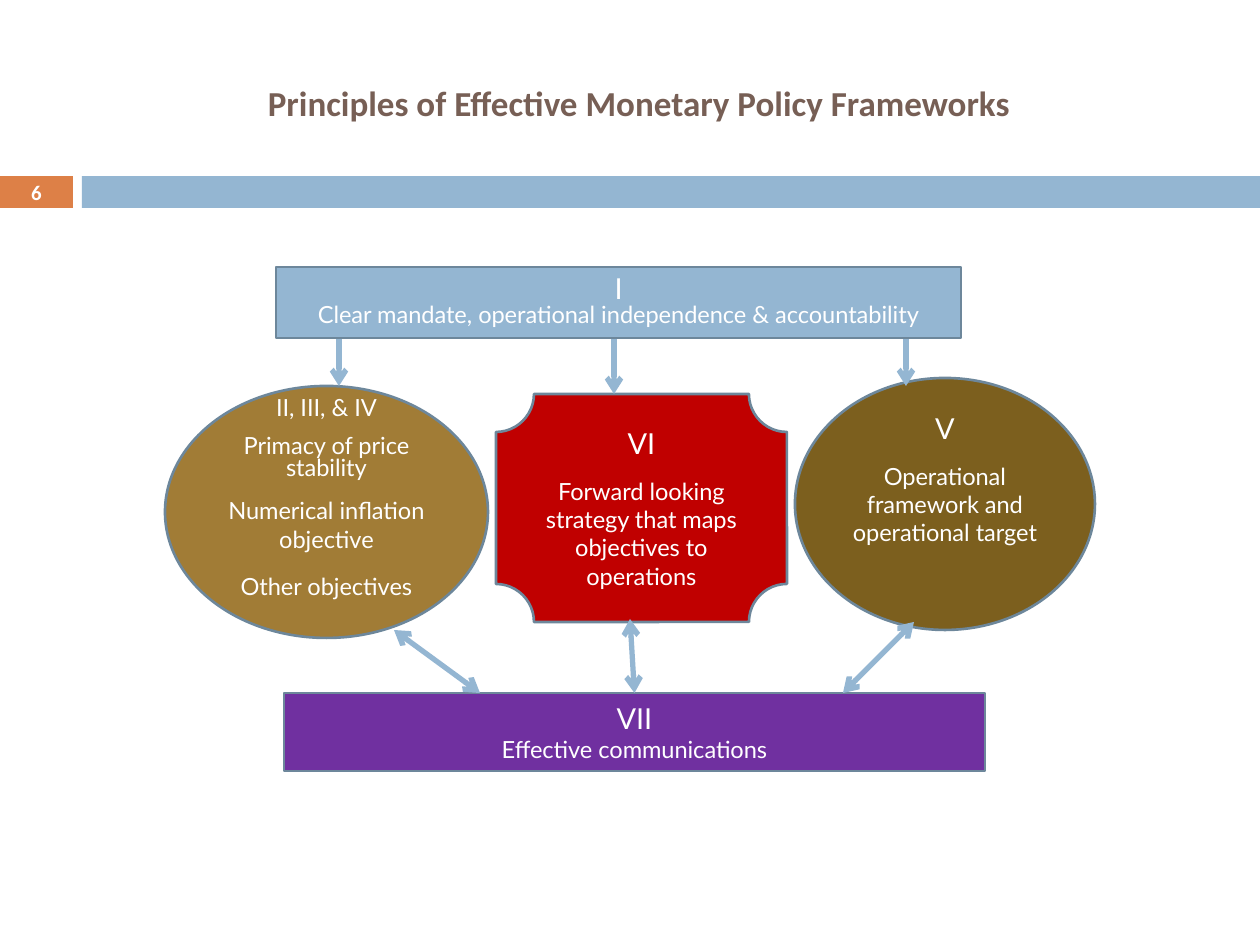
from pptx import Presentation
from pptx.dml.color import RGBColor
from pptx.enum.shapes import MSO_CONNECTOR, MSO_SHAPE
from pptx.enum.text import MSO_ANCHOR, PP_ALIGN
from pptx.oxml.ns import qn
from pptx.util import Pt
from lxml.etree import SubElement

WHITE = RGBColor(0xFF, 0xFF, 0xFF)
BROWN = RGBColor(0x77, 0x5F, 0x55)
ORANGE = RGBColor(0xDD, 0x80, 0x47)
BLUE = RGBColor(0x94, 0xB6, 0xD2)
SLATE = RGBColor(0x6D, 0x87, 0x9B)
GOLD = RGBColor(0xA1, 0x7C, 0x36)
OLIVE = RGBColor(0x7C, 0x5F, 0x1E)
RED = RGBColor(0xC0, 0x00, 0x00)
PURPLE = RGBColor(0x70, 0x30, 0xA0)

SCALE = 914400 / 126
BIG, BODY = 16.5, 13.5
RECT, OVAL = MSO_SHAPE.RECTANGLE, MSO_SHAPE.OVAL

BANDS = [((0, 176, 73, 32), ORANGE), ((82, 176, 1178, 32), BLUE)]
LABELS = [
    ((136, 57, 1006, 91), "Principles of Effective Monetary Policy Frameworks", 20, BROWN),
    ((0, 175, 73, 34), "6", 11.9, WHITE),
]
# name: shape, box, fill, bottom inset, (text, size, line spacing, space before)
NODES = {
    "goals": (OVAL, (165, 386, 323, 252), GOLD, 18, [
        ("II, III, & IV", BODY, 0.8, 0),
        ("Primacy of price stability", BODY, 0.8, 8.6),
        ("Numerical inflation objective", BODY, 1, 8.6),
        ("Other objectives", BODY, 1, 10.8)]),
    "mandate": (RECT, (276, 267, 685, 71), BLUE, 3.6, [
        ("I", BIG, 0.8, 0),
        ("Clear mandate, operational independence & accountability", BODY, 0.8, 0)]),
    "target": (OVAL, (795, 378, 300, 252), OLIVE, 32.4, [
        ("V", BIG, 1, 0),
        ("Operational framework and operational target", BODY, 1, 9)]),
    "comms": (RECT, (284, 693, 701, 78), PURPLE, 3.6, [
        ("VII", BIG, 1, 0),
        ("Effective communications", BODY, 1, 0)]),
    "plan": (MSO_SHAPE.PLAQUE, (496, 394, 291, 228), RED, 3.6, [
        ("VI", BIG, 1, 0),
        ("Forward looking strategy that maps objectives to operations", BODY, 1, 9)]),
}
DOWN = [(339, 339, 339, 386), (906, 339, 906, 386), (614, 339, 614, 394)]
BOTH = [(394, 630, 480, 693), (914, 622, 843, 693), (634, 693, 630, 619)]


def px(vals):
    return [round(v * SCALE) for v in vals]


def style(obj, **vals):
    for key, val in vals.items():
        setattr(obj, key, val)


def block(kind, box, fill):
    shape = slide.shapes.add_shape(kind, *px(box))
    shape.shadow.inherit = False
    shape.fill.solid()
    shape.fill.fore_color.rgb = fill
    shape.line.fill.background()
    return shape


def write(shape, rows, face, color, bold=False, **frame):
    text = shape.text_frame
    style(text, word_wrap=True, vertical_anchor=MSO_ANCHOR.MIDDLE, **frame)
    for i, (words, size, gap, before) in enumerate(rows):
        para = text.add_paragraph() if i else text.paragraphs[0]
        style(para, alignment=PP_ALIGN.CENTER, line_spacing=gap, space_before=Pt(before))
        run = para.add_run()
        run.text = words
        style(run.font, name=face, size=Pt(size), bold=bold)
        run.font.color.rgb = color


def arrow(ends, heads):
    line = slide.shapes.add_connector(MSO_CONNECTOR.STRAIGHT, *px(ends))
    line.line.color.rgb = BLUE
    line.line.width = Pt(3)
    props = line._element.spPr
    for head in heads:
        SubElement(props.find(qn("a:ln")), qn("a:" + head), type="arrow")
    SubElement(props, qn("a:effectLst"))
    return line


deck = Presentation()
style(deck, slide_width=px([1260])[0], slide_height=px([945])[0])
slide = deck.slides.add_slide(deck.slide_layouts[6])

for box, fill in BANDS:
    block(RECT, box, fill)
for box, words, size, color in LABELS:
    label = slide.shapes.add_textbox(*px(box))
    write(label, [(words, size, 1, 0)], "Calibri", color, True)

nodes = {}
for name, (kind, box, fill, base, rows) in NODES.items():
    node = nodes[name] = block(kind, box, fill)
    node.line.color.rgb = SLATE
    node.line.width = Pt(1.5)
    write(node, rows, "Lato", WHITE, margin_bottom=Pt(base))

for ends in DOWN:
    arrow(ends, ["tailEnd"])
links = [arrow(ends, ["headEnd", "tailEnd"]) for ends in BOTH]
links[-1].begin_connect(nodes["comms"], 0)

deck.save("out.pptx")
